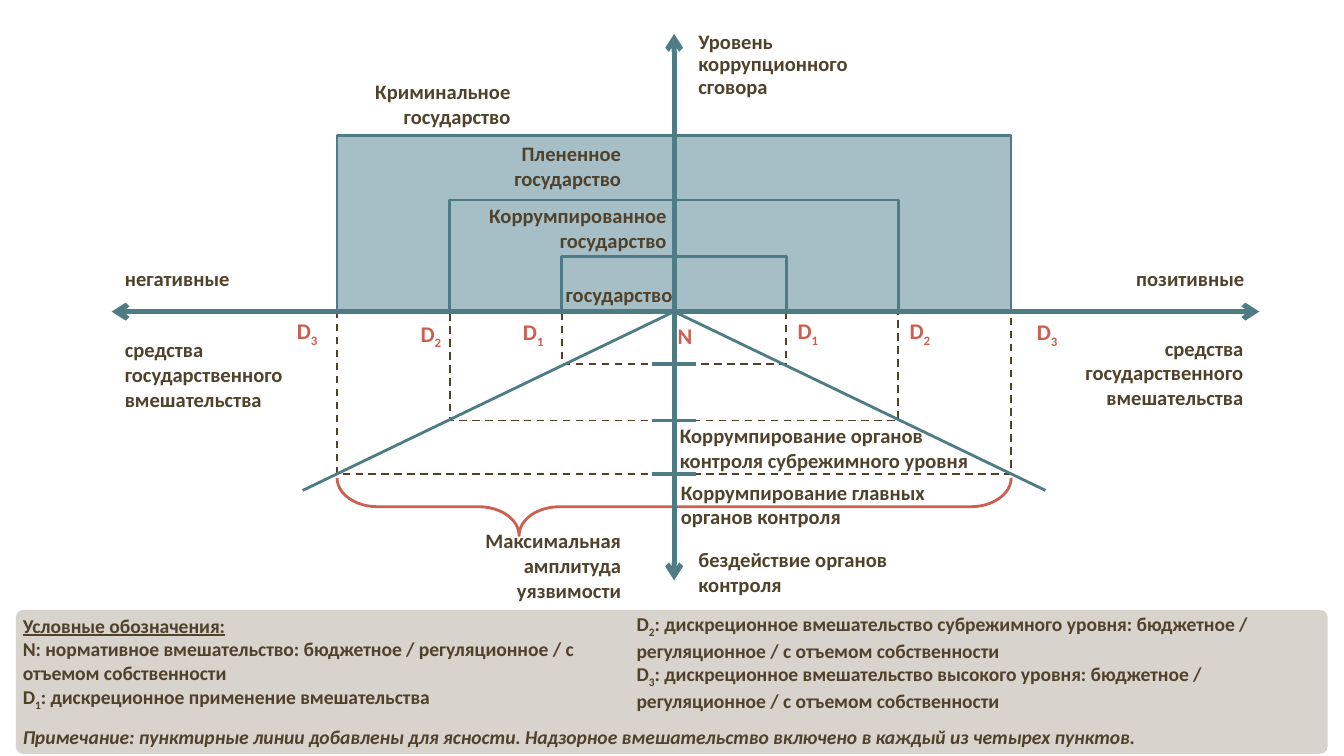
from typing import NamedTuple

from lxml import etree
from pptx import Presentation
from pptx.dml.color import RGBColor
from pptx.enum.dml import MSO_LINE
from pptx.enum.shapes import MSO_CONNECTOR, MSO_SHAPE
from pptx.enum.text import MSO_ANCHOR, PP_ALIGN
from pptx.oxml.ns import qn
from pptx.util import Cm, Pt

LEFT, CENTER, RIGHT = PP_ALIGN.LEFT, PP_ALIGN.CENTER, PP_ALIGN.RIGHT
TOP, MIDDLE, BOTTOM = MSO_ANCHOR.TOP, MSO_ANCHOR.MIDDLE, MSO_ANCHOR.BOTTOM
RECT, PANEL, BRACE = MSO_SHAPE.RECTANGLE, MSO_SHAPE.ROUNDED_RECTANGLE, MSO_SHAPE.LEFT_BRACE
STRAIGHT, DASH = MSO_CONNECTOR.STRAIGHT, MSO_LINE.DASH

FONT = "Calibri"
TEXT, TEAL, RED, STATE_FILL, PANEL_FILL = "50412B", "4D7C85", "CD5F50", "A6BFC6", "B3A99D"
NO_GRID_STYLE = "{2D5ABB26-0587-4C30-8999-92F81FD0307C}"
X0, Y0 = 12.74, 5.89  # where the axes cross, in cm


class Level(NamedTuple):
    """A degree of state capture: half width, height above and depth below the axis."""
    half: float
    height: float
    depth: float


class Label(NamedTuple):
    text: str
    x: float
    y: float
    w: float
    h: float
    align: PP_ALIGN = LEFT
    anchor: MSO_ANCHOR = TOP
    spacing: float = 1.0


LEVELS = [Level(6.37, 3.33, 3.07), Level(4.24, 2.11, 2.06), Level(2.12, 1.04, 0.99)]

POINTS = [
    Label("N", 11.56, 5.97, 2.77, 0.81, CENTER),
    Label("D_3", 5.21, 5.87, 1.19, 0.91, CENTER),
    Label("D_2", 6.71, 5.92, 2.87, 0.91, CENTER),
    Label("D_1", 8.48, 5.89, 3.2, 0.56, CENTER),
    Label("D_1", 13.67, 5.87, 3.2, 0.56, CENTER),
    Label("D_2", 16.05, 5.87, 2.67, 0.99, CENTER),
    Label("D_3", 19.18, 5.89, 1.22, 0.89, CENTER),
]
MEANS = "средства государственного вмешательства"
LABELS = [
    Label("Криминальное государство", 5.94, 1.37, 3.96, 1.14, RIGHT),
    Label("Плененное государство", 8.46, 2.64, 3.53, 0.99, RIGHT, MIDDLE),
    Label("Коррумпированное государство", 8.79, 3.71, 4.06, 1.14, RIGHT),
    Label("государство", 10.44, 5.21, 2.64, 0.71),
    Label("Коррумпирование органов контроля субрежимного уровня",
          12.6, 7.95, 6.1, 1.04, LEFT, MIDDLE),
    Label("Коррумпирование главных органов контроля", 12.62, 8.99, 6.48, 1.09, LEFT, MIDDLE),
    Label("Уровень коррупционного сговора", 12.95, 0.48, 3.4, 1.42, LEFT, TOP, 0.9),
    Label("бездействие органов контроля", 12.95, 10.59, 4.6, 0.43, LEFT, MIDDLE),
    Label("негативные", 2.11, 4.88, 3.51, 0.74, LEFT, BOTTOM),
    Label("позитивные", 21.03, 4.93, 2.74, 0.69, RIGHT, BOTTOM),
    Label(MEANS, 2.11, 6.25, 3.61, 1.09),
    Label(MEANS, 19.43, 6.22, 4.32, 1.04, RIGHT),
    Label("Максимальная амплитуда уязвимости", 7.72, 9.86, 4.27, 1.35, RIGHT),
]
LEGEND_LEFT = [
    "Условные обозначения:",
    "N: нормативное вмешательство: бюджетное / регуляционное / с отъемом собственности",
    "D_1: дискреционное применение вмешательства",
]
LEGEND_RIGHT = [
    "D_2: дискреционное вмешательство субрежимного уровня: "
    "бюджетное / регуляционное / с отъемом собственности",
    "D_3: дискреционное вмешательство высокого уровня: "
    "бюджетное / регуляционное / с отъемом собственности",
]
NOTE = ("Примечание: пунктирные линии добавлены для ясности. "
        "Надзорное вмешательство включено в каждый из четырех пунктов.")


def rgb(color: str) -> RGBColor:
    return RGBColor.from_string(color)


def write(p, text: str, size: float, color: str) -> None:
    """Fill a paragraph; the character after an underscore becomes a subscript."""
    base, _, rest = text.partition("_")
    for i, part in enumerate((base, rest[:1], rest[1:])):
        if not part:
            continue
        r = p.add_run()
        r.text = part
        r.font.name, r.font.size, r.font.bold = FONT, Pt(size), True
        r.font.color.rgb = rgb(color)
        if i == 1:
            r._r.get_or_add_rPr().set("baseline", "-25000")


def add_label(s, label: Label, size: float, color: str) -> None:
    tf = s.shapes.add_textbox(Cm(label.x), Cm(label.y), Cm(label.w), Cm(label.h)).text_frame
    tf.word_wrap = True
    tf.vertical_anchor = label.anchor
    p = tf.paragraphs[0]
    p.alignment, p.line_spacing = label.align, label.spacing
    write(p, label.text, size, color)


def add_shape(s, kind, x: float, y: float, w: float, h: float, fill: str = "",
              line: str = "", width: float = 1.5):
    sp = s.shapes.add_shape(kind, Cm(x), Cm(y), Cm(w), Cm(h))
    sp.shadow.inherit = False
    if fill:
        sp.fill.solid()
        sp.fill.fore_color.rgb = rgb(fill)
    else:
        sp.fill.background()
    if line:
        sp.line.color.rgb = rgb(line)
        sp.line.width = Pt(width)
    else:
        sp.line.fill.background()
    return sp


def add_line(s, x1: float, y1: float, x2: float, y2: float, width: float,
             arrows: bool = False) -> None:
    line = s.shapes.add_connector(STRAIGHT, Cm(x1), Cm(y1), Cm(x2), Cm(y2))
    line.line.color.rgb = rgb(TEAL)
    line.line.width = Pt(width)
    if arrows:
        for end in ("a:headEnd", "a:tailEnd"):
            etree.SubElement(line.line._get_or_add_ln(), qn(end), type="arrow")
    etree.SubElement(line._element.spPr, qn("a:effectLst"))


def add_levels(s) -> None:
    for level in LEVELS:
        sp = add_shape(s, RECT, X0 - level.half, Y0, 2 * level.half, level.depth,
                       line=TEXT, width=1)
        sp.line.dash_style = DASH
    for level in LEVELS:
        add_shape(s, RECT, X0 - level.half, Y0 - level.height, 2 * level.half,
                  level.height, STATE_FILL, TEAL)
    for side in (-1, 1):
        add_line(s, X0, Y0, X0 + side * 7.02, Y0 + 3.38, 1.5)
    for level in LEVELS:
        add_line(s, X0 - 0.42, Y0 + level.depth, X0 + 0.42, Y0 + level.depth, 1.75)


def add_amplitude_brace(s) -> None:
    span, depth = 2 * LEVELS[0].half, 1.09
    sp = add_shape(s, BRACE, X0 - depth / 2, 9.58 - span / 2, depth, span, line=RED)
    sp.adjustments[0], sp.adjustments[1] = 0.7, 0.73
    sp.rotation = 270
    sp._element.spPr.find(qn("a:xfrm")).set("flipV", "1")


def fill_cell(cell, paragraphs: list[str], margin: float) -> None:
    cell.fill.background()
    cell.vertical_anchor = MIDDLE
    cell.margin_left = cell.margin_right = Cm(0.13)
    cell.margin_top = cell.margin_bottom = Cm(margin)
    tf = cell.text_frame
    for i, text in enumerate(paragraphs):
        write(tf.add_paragraph() if i else tf.paragraphs[0], text, 10.5, TEXT)


def add_legend(s) -> None:
    panel = add_shape(s, PANEL, 0.3, 11.53, 24.79, 2.72, PANEL_FILL)
    panel.adjustments[0] = 0.05
    color = panel._element.spPr.find(qn("a:solidFill"))[0]
    etree.SubElement(color, qn("a:alpha"), val="50000")

    table = s.shapes.add_table(2, 2, Cm(0.3), Cm(11.48), Cm(24.8), Cm(2.8)).table
    table.first_row = table.horz_banding = False
    table._tbl.tblPr.find(qn("a:tableStyleId")).text = NO_GRID_STYLE
    table.columns[0].width, table.columns[1].width = Cm(11.6), Cm(13.2)
    table.rows[0].height, table.rows[1].height = Cm(2.12), Cm(0.68)
    note = table.cell(1, 0)
    note.merge(table.cell(1, 1))
    fill_cell(table.cell(0, 0), LEGEND_LEFT, 0.1)
    fill_cell(table.cell(0, 1), LEGEND_RIGHT, 0.1)
    fill_cell(note, [NOTE], 0)
    table.cell(0, 0).text_frame.paragraphs[0].runs[0].font.underline = True
    note.text_frame.paragraphs[0].runs[0].font.italic = True


def main() -> None:
    prs = Presentation()
    prs.slide_width, prs.slide_height = Cm(25.4), Cm(14.29)
    s = prs.slides.add_slide(prs.slide_layouts[6])
    add_levels(s)
    add_amplitude_brace(s)
    add_line(s, 2.11, Y0, 23.8, Y0, 2.75, arrows=True)
    add_line(s, X0, 0.64, X0, 10.97, 2.75, arrows=True)
    for label in POINTS:
        add_label(s, label, 12, RED)
    for label in LABELS:
        add_label(s, label, 11, TEXT)
    add_legend(s)
    prs.save("out.pptx")


if __name__ == "__main__":
    main()
